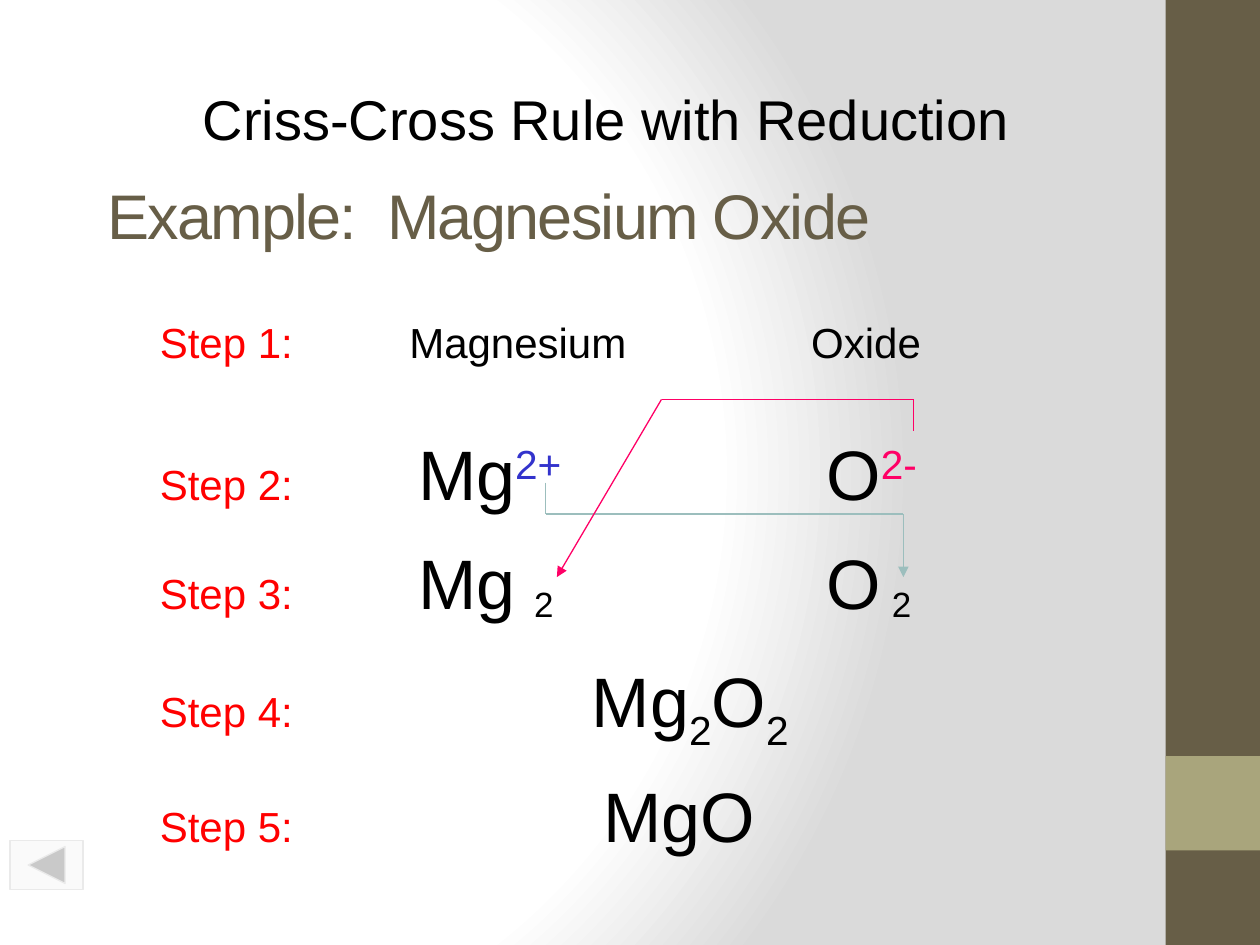
import pptx
import pptx.dml.color
import pptx.enum.shapes
import pptx.enum.text
import pptx.oxml
import pptx.oxml.ns
import pptx.util
from pptx.util import Inches

NS = pptx.oxml.ns.nsdecls("a", "p")
SHAPE = pptx.enum.shapes.MSO_SHAPE
BLACK, RED, BLUE, PINK, TEAL, BROWN = (
    "000000", "FF0000", "3333CC", "FF0066", "9CBEBD", "675E47")

# Run: text, size, colour, baseline in percent
HEAD = [("Criss-Cross Rule with Reduction", 32, BLACK, 0)]
TITLE = [("Example:  Magnesium Oxide", 36, BROWN, 0)]
SUB = [("2", 20, BLACK, 0)]

# Step: top, width, height, tab stops, runs after the label
STEPS = [
    (2.46, 6.3, 0.5, (1.98, 5.17), [("\tMagnesium\tOxide", 24, BLACK, 0)]),
    (3.37, 6.3, 0.77, (2.05, 5.29), [
        ("\tMg", 40, BLACK, 0), ("2+", 40, BLUE, 30),
        ("\tO", 40, BLACK, 0), ("2-", 40, PINK, 30)]),
    (4.23, 6, 0.77, (2.05, 5.29), [("\tMg\tO", 40, BLACK, 0)]),
    (5.17, 5.3, 0.77, (3.43,), [
        ("\tMg", 40, BLACK, 0), ("2", 40, BLACK, -25),
        ("O", 40, BLACK, 0), ("2", 40, BLACK, -25)]),
    (6.08, 5.05, 0.77, (3.52,), [("\tMgO", 40, BLACK, 0)]),
]
SUBS = [4.14, 6.98]
ARROWS = [
    (TEAL, [(4.33, 3.83), (4.33, 4.08), (7.17, 4.08), (7.17, 4.58)]),
    (PINK, [(7.25, 3.42), (7.25, 3.17), (5.25, 3.17), (4.42, 4.58)]),
]
BARS = [(0, 7.5, BROWN), (6, 0.75, "A9A57C")]
STOPS = [(0, "FFFFFF"), (75, "FFFFFF"), (100, "DADADA")]


def paint(part, code):
    part.rgb = pptx.dml.color.RGBColor.from_string(code)


def add_xml(parent, text):
    node = pptx.oxml.parse_xml(text)
    parent.append(node)
    return node


def write(frame, runs):
    look = {"word_wrap": True, "auto_size": pptx.enum.text.MSO_AUTO_SIZE.NONE}
    for key, value in look.items():
        setattr(frame, key, value)
    para = frame.paragraphs[0]
    para.alignment = pptx.enum.text.PP_ALIGN.LEFT
    for text, size, code, base in runs:
        run = para.add_run()
        run.text = text
        for key, value in {"name": "Arial", "size": pptx.util.Pt(size)}.items():
            setattr(run.font, key, value)
        paint(run.font.color, code)
        if base:
            run.font._element.set("baseline", str(base * 1000))
    return para


def add_text(slide, place, runs):
    box = slide.shapes.add_textbox(*map(Inches, place))
    return write(box.text_frame, runs)


def add_shape(slide, kind, place, code):
    shape = slide.shapes.add_shape(kind, *map(Inches, place))
    shape.shadow.inherit = False
    shape.fill.solid()
    paint(shape.fill.fore_color, code)
    shape.line.fill.background()
    return shape


def add_step(slide, num, step):
    top, width, height, tabs, runs = step
    label = (f"Step {num}:", 24, RED, 0)
    para = add_text(slide, (1.17, top, width, height), [label] + runs)
    marks = "".join(f'<a:tab pos="{Inches(tab)}" algn="l"/>' for tab in tabs)
    add_xml(para._p.get_or_add_pPr(), f"<a:tabLst {NS}>{marks}</a:tabLst>")


def add_arrow(slide, code, points):
    """Draw a bent arrow as straight parts, with the head on the last."""
    for start, end in zip(points, points[1:]):
        line = slide.shapes.add_connector(
            pptx.enum.shapes.MSO_CONNECTOR.STRAIGHT,
            *map(Inches, start + end))
        paint(line.line.color, code)
        line.line.width = pptx.util.Pt(0.75)
        add_xml(line._element.spPr, f"<a:effectLst {NS}/>")
    add_xml(line.line._get_or_add_ln(), f'<a:tailEnd {NS} type="triangle"/>')


def set_back(slide):
    stops = "".join(
        f'<a:gs pos="{pos * 1000}"><a:srgbClr val="{code}"/></a:gs>'
        for pos, code in STOPS)
    slide._element.cSld.insert(0, pptx.oxml.parse_xml(
        f'<p:bg {NS}><p:bgPr><a:gradFill rotWithShape="1">'
        f'<a:gsLst>{stops}</a:gsLst><a:path path="circle">'
        '<a:fillToRect l="20000" t="50000" r="100000" b="50000"/></a:path>'
        '</a:gradFill><a:effectLst/></p:bgPr></p:bg>'))


def set_title(slide):
    title = slide.shapes.title
    place = zip(("left", "top", "width", "height"), (0.75, 1.08, 8.5, 1.25))
    for key, value in place:
        setattr(title, key, Inches(value))
    title.text_frame.vertical_anchor = pptx.enum.text.MSO_ANCHOR.MIDDLE
    para = write(title.text_frame, TITLE)
    para.runs[0].font._element.set("spc", "-100")


def add_button(slide):
    place = (0.08, 6.67, 0.58, 0.39)
    button = add_shape(
        slide, SHAPE.ACTION_BUTTON_BACK_OR_PREVIOUS, place, "F7F7F7")
    paint(button.line.color, "EAEAEA")
    button.line.width = pptx.util.Pt(0.75)
    tint = button.fill._xPr.find(".//" + pptx.oxml.ns.qn("a:srgbClr"))
    add_xml(tint, f'<a:alpha {NS} val="50000"/>')


def main():
    deck = pptx.Presentation()
    deck.slide_width, deck.slide_height = Inches(10), Inches(7.5)
    slide = deck.slides.add_slide(deck.slide_layouts[5])
    set_back(slide)
    for top, height, code in BARS:
        add_shape(slide, SHAPE.RECTANGLE, (9.25, top, 0.75, height), code)
    set_title(slide)
    for num, step in enumerate(STEPS, 1):
        add_step(slide, num, step)
    for left in SUBS:
        add_text(slide, (left, 4.57, 0.36, 0.43), SUB)
    for code, points in ARROWS:
        add_arrow(slide, code, points)
    add_button(slide)
    add_text(slide, (1.51, 0.62, 6.65, 0.64), HEAD)
    deck.save("out.pptx")


if __name__ == "__main__":
    main()
